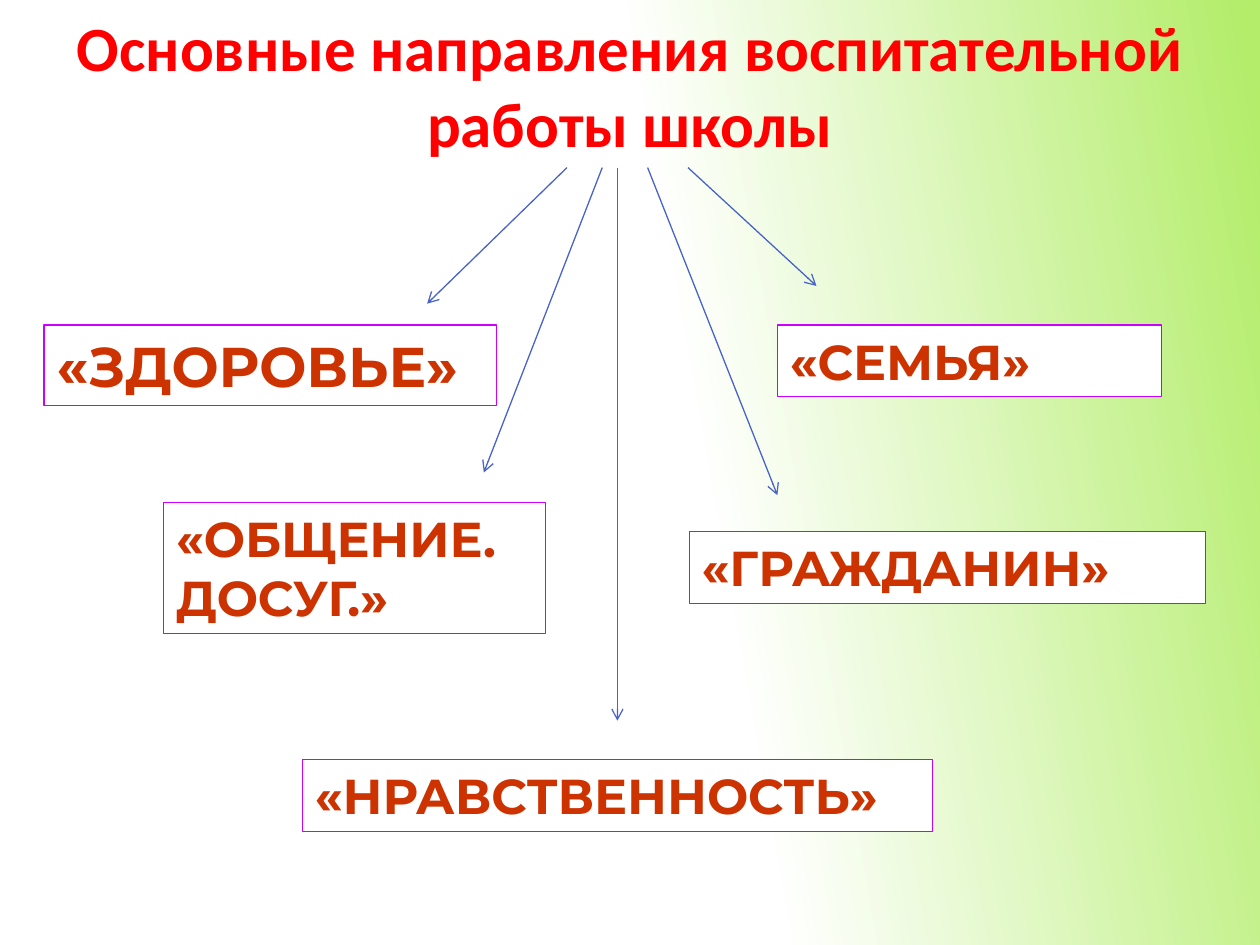
from lxml import etree
from pptx import Presentation
from pptx import util as u
from pptx.dml.color import RGBColor
from pptx.enum import shapes, text
from pptx.oxml.ns import qn

RED = RGBColor(0xFF, 0x00, 0x00)
BRICK = RGBColor(0xCC, 0x33, 0x00)
MAGENTA = RGBColor(0xCC, 0x00, 0xFF)
BLUE = RGBColor(0x49, 0x63, 0xC7)
WHITE = RGBColor(0xFF, 0xFF, 0xFF)
GREEN = RGBColor(0xB3, 0xED, 0x6A)

presentation = Presentation()
presentation.slide_width = u.Inches(10)
presentation.slide_height = u.Inches(7.5)
slide = presentation.slides.add_slide(presentation.slide_layouts[5])

background = slide.background.fill
background.gradient()
background.gradient_angle = 10
for stop, color, position in zip(background.gradient_stops, (WHITE, GREEN), (0.55, 0.99)):
    stop.color.rgb = color
    stop.position = position

title = slide.shapes.title
title.left, title.top = 0, u.Inches(0.02)
title.width, title.height = presentation.slide_width, u.Inches(1.31)
title.text_frame.text = "Основные направления воспитательной работы школы"
title.text_frame.auto_size = text.MSO_AUTO_SIZE.NONE
title.text_frame.vertical_anchor = text.MSO_ANCHOR.TOP
paragraph = title.text_frame.paragraphs[0]
paragraph.alignment = text.PP_ALIGN.CENTER
paragraph.font.name = "Calibri"
paragraph.font.size = u.Pt(36)
paragraph.font.bold = True
paragraph.font.color.rgb = RED

# Wording, font size, then left, top, width and height in inches
directions = [
    ("«ЗДОРОВЬЕ»", 32, (0.35, 2.58, 3.59, 0.64)),
    ("«ОБЩЕНИЕ.\nДОСУГ.»", 28, (1.3, 3.99, 3.03, 1.04)),
    ("«НРАВСТВЕННОСТЬ»", 28, (2.4, 6.03, 5, 0.57)),
    ("«ГРАЖДАНИН»", 28, (5.47, 4.22, 4.1, 0.57)),
    ("«СЕМЬЯ»", 28, (6.17, 2.58, 3.05, 0.57)),
]
for wording, size, box in directions:
    shape = slide.shapes.add_shape(shapes.MSO_SHAPE.RECTANGLE, *map(u.Inches, box))
    shape.shadow.inherit = False
    shape.fill.solid()
    shape.fill.fore_color.rgb = WHITE
    shape.line.color.rgb = MAGENTA
    shape.line.width = u.Pt(0.75)
    frame = shape.text_frame
    frame.word_wrap = True
    frame.vertical_anchor = text.MSO_ANCHOR.TOP
    frame.text = wording
    for paragraph in frame.paragraphs:
        paragraph.alignment = text.PP_ALIGN.LEFT
        paragraph.font.name = "Montserrat"
        paragraph.font.size = u.Pt(size)
        paragraph.font.bold = True
        paragraph.font.color.rgb = BRICK

# Every arrow leaves the lower edge of the title: start x, end x, end y
ARROW_TOP = 1.33
arrows = [
    (4.5, 3.39, 2.41),
    (4.78, 3.84, 3.75),
    (4.9, 4.9, 5.72),
    (5.14, 6.17, 3.93),
    (5.46, 6.48, 2.27),
]
for start_x, end_x, end_y in arrows:
    ends = map(u.Inches, (start_x, ARROW_TOP, end_x, end_y))
    arrow = slide.shapes.add_connector(shapes.MSO_CONNECTOR.STRAIGHT, *ends)
    arrow.line.color.rgb = BLUE
    arrow.line.width = u.Pt(0.75)
    properties = arrow.element.spPr
    etree.SubElement(properties.find(qn("a:ln")), qn("a:tailEnd"), type="arrow")
    etree.SubElement(properties, qn("a:effectLst"))

presentation.save("out.pptx")
